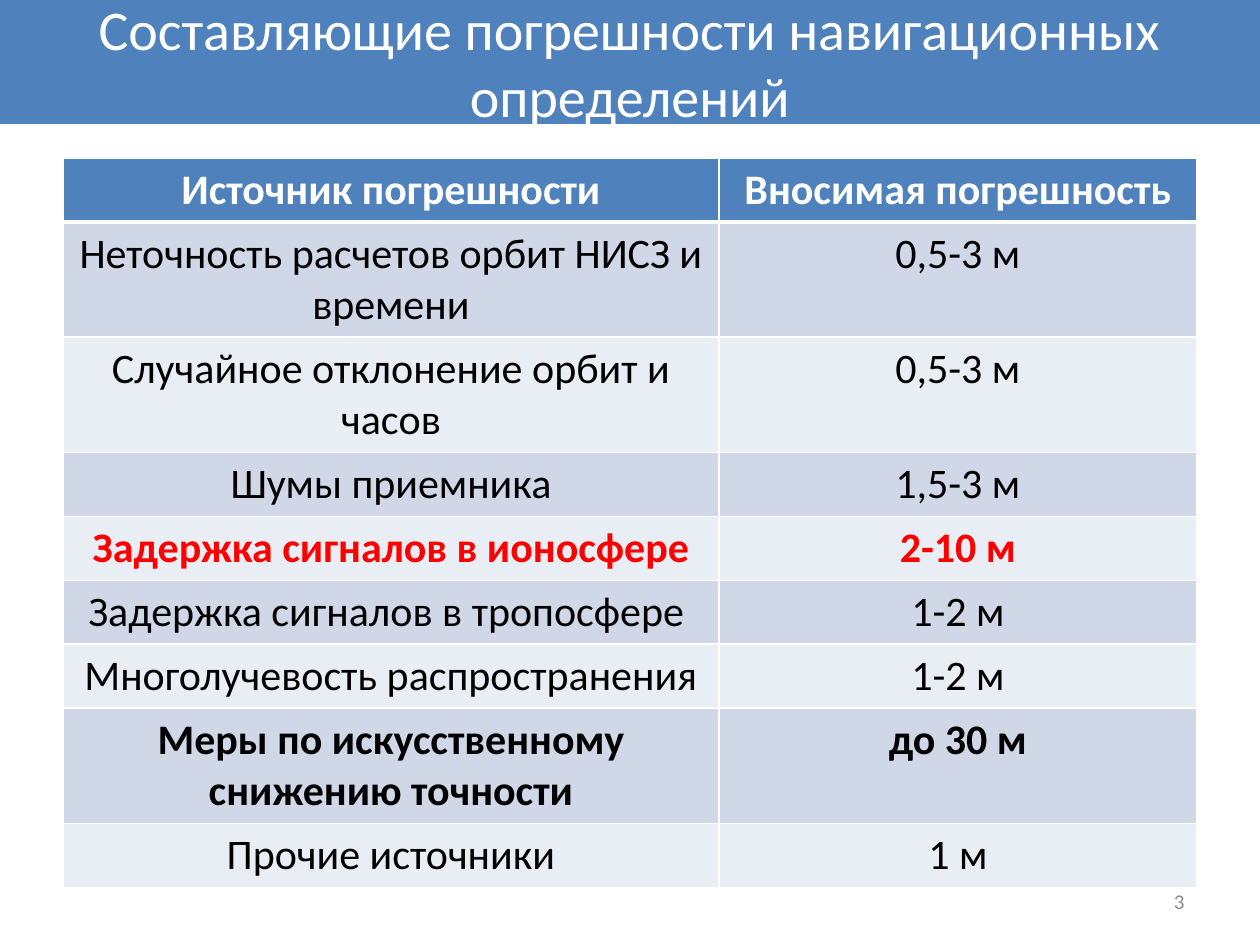
from lxml.etree import SubElement
from pptx import Presentation
from pptx.dml.color import RGBColor
from pptx.enum.shapes import MSO_SHAPE
from pptx.enum.text import MSO_ANCHOR, PP_ALIGN
from pptx.oxml.ns import qn
from pptx.util import Emu, Pt

PX = 914400 // 126
BLUE = RGBColor(0x4F, 0x81, 0xBD)
BAND_DARK = RGBColor(0xD0, 0xD8, 0xE8)
BAND_LIGHT = RGBColor(0xE9, 0xED, 0xF4)
WHITE = RGBColor(0xFF, 0xFF, 0xFF)
BLACK = RGBColor(0x00, 0x00, 0x00)
RED = RGBColor(0xFF, 0x00, 0x00)
GRAY = RGBColor(0x8C, 0x8C, 0x8C)


def write(frame, text, size=24, color=BLACK, bold=False, align=PP_ALIGN.CENTER):
    frame.word_wrap = True
    para = frame.paragraphs[0]
    para.alignment = align
    span = para.add_run()
    span.text = text
    span.font.name = "Calibri"
    span.font.size = Pt(size)
    span.font.bold = bold
    span.font.color.rgb = color


def add_borders(cell, bottom_width):
    properties = cell._tc.get_or_add_tcPr()
    widths = {"a:lnL": 1, "a:lnR": 1, "a:lnT": 1, "a:lnB": bottom_width}
    for position, (tag, width) in enumerate(widths.items()):
        line = SubElement(properties, qn(tag), w=str(Pt(width)))
        fill = SubElement(line, qn("a:solidFill"))
        SubElement(fill, qn("a:srgbClr"), val=str(WHITE))
        properties.insert(position, line)  # borders come before the cell fill


deck = Presentation()
deck.slide_width, deck.slide_height = Emu(1260 * PX), Emu(945 * PX)
page = deck.slides.add_slide(deck.slide_layouts[6])

# Error table: source, error, row height, text colour, bold
ONE_LINE, TWO_LINES = 64, 115
rows = [
    ("Источник погрешности", "Вносимая погрешность", ONE_LINE, WHITE, True),
    ("Неточность расчетов орбит НИСЗ и времени", "0,5-3 м", TWO_LINES, BLACK, False),
    ("Случайное отклонение орбит и часов", "0,5-3 м", TWO_LINES, BLACK, False),
    ("Шумы приемника", "1,5-3 м", ONE_LINE, BLACK, False),
    ("Задержка сигналов в ионосфере", "2-10 м", ONE_LINE, RED, True),
    ("Задержка сигналов в тропосфере ", "1-2 м", ONE_LINE, BLACK, False),
    ("Многолучевость распространения", "1-2 м", ONE_LINE, BLACK, False),
    ("Меры по искусственному снижению точности", "до 30 м", TWO_LINES, BLACK, True),
    ("Прочие источники", "1 м", ONE_LINE, BLACK, False),
]
table_height = sum(row[2] for row in rows)
table = page.shapes.add_table(
    len(rows), 2, 63 * PX, 158 * PX, 1134 * PX, table_height * PX
).table
for column, width in zip(table.columns, (656, 478)):
    column.width = Emu(width * PX)
for index, (source, error, height, color, bold) in enumerate(rows):
    table.rows[index].height = Emu(height * PX)
    band = BLUE if index == 0 else BAND_DARK if index % 2 else BAND_LIGHT
    for cell, text in zip(table.rows[index].cells, (source, error)):
        cell.fill.solid()
        cell.fill.fore_color.rgb = band
        add_borders(cell, bottom_width=3 if index == 0 else 1)
        write(cell.text_frame, text, color=color, bold=bold)

# Page number
number_box = page.shapes.add_textbox(903 * PX, 876 * PX, 294 * PX, 50 * PX)
number_box.text_frame.vertical_anchor = MSO_ANCHOR.MIDDLE
write(number_box.text_frame, "3", size=12, color=GRAY, align=PP_ALIGN.RIGHT)

# Title banner
banner = page.shapes.add_shape(MSO_SHAPE.RECTANGLE, 0, 0, 1260 * PX, 124 * PX)
banner.shadow.inherit = False
banner.fill.solid()
banner.fill.fore_color.rgb = BLUE
banner.line.fill.background()
banner.text_frame.vertical_anchor = MSO_ANCHOR.MIDDLE
write(banner.text_frame, "Составляющие погрешности навигационных определений",
      size=32, color=WHITE)

deck.save("out.pptx")
